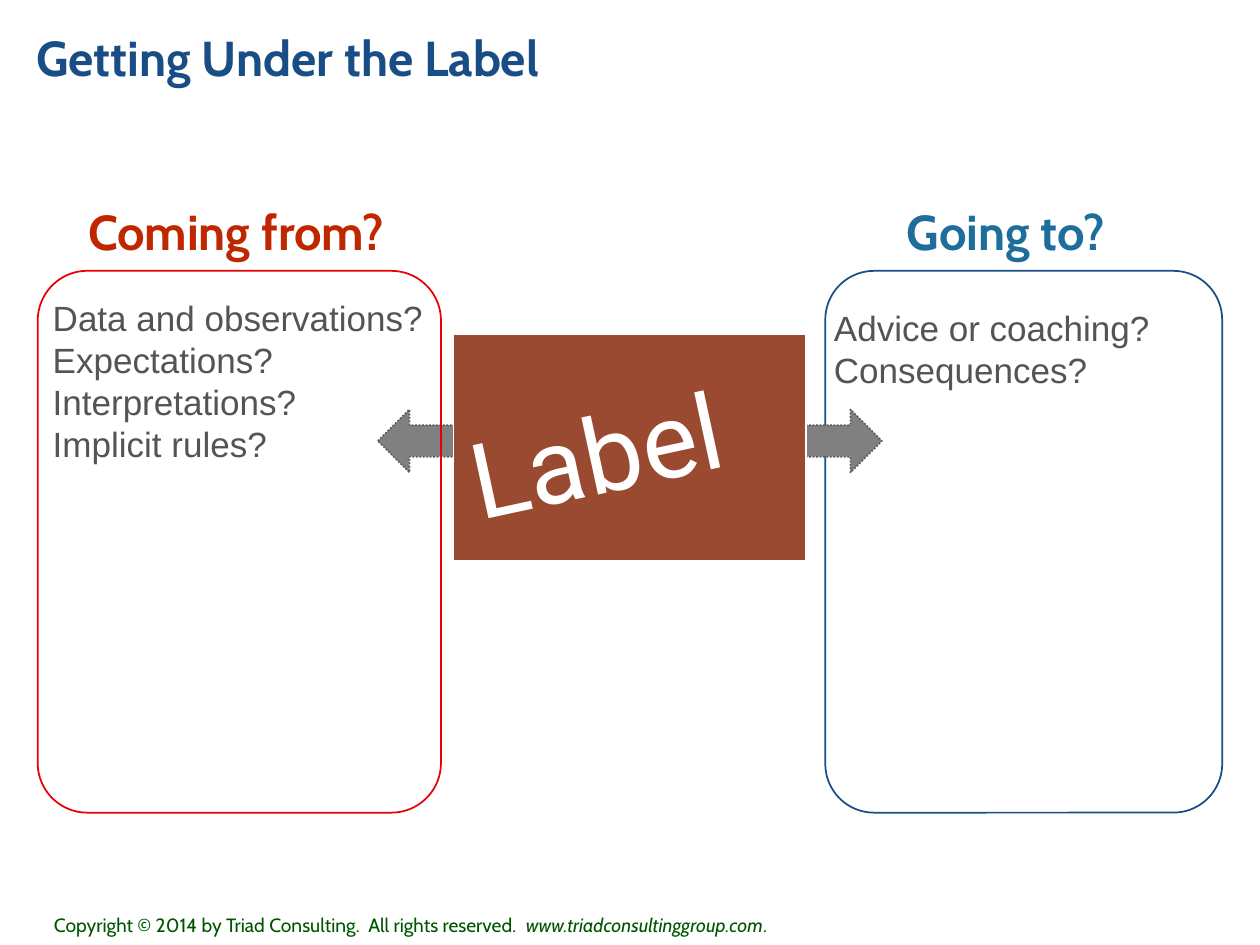
from pptx import Presentation
from pptx import util as u
from pptx.dml.color import RGBColor
from pptx.enum import dml, shapes, text

COLORS = {
    "title": "194D85",
    "from": "BF2700",
    "from_line": "E90000",
    "to": "1E6E9C",
    "to_line": "194D85",
    "body": "545454",
    "arrow": "808080",
    "arrow_line": "595959",
    "label": "994A30",
    "white": "FFFFFF",
    "footer": "005400",
}
PANEL_TOP, PANEL_HEIGHT = 2.15, 4.3
HEADING_TOP, HEADING_HEIGHT = 1.55, 0.57
ARROW_TOP, ARROW_HEIGHT = 3.25, 0.5


def rgb(name):
    return RGBColor.from_string(COLORS[name])


def inches(box):
    return [u.Inches(v) for v in box]


def add_text(s, box, lines, size, font, color, bold=False, rotation=0):
    sp = s.shapes.add_textbox(*inches(box))
    sp.rotation = rotation
    tf = sp.text_frame
    tf.word_wrap = False
    tf.auto_size = text.MSO_AUTO_SIZE.SHAPE_TO_FIT_TEXT
    for i, line in enumerate(lines):
        p = tf.paragraphs[0] if i == 0 else tf.add_paragraph()
        for part, italic in line if isinstance(line, list) else [(line, False)]:
            r = p.add_run()
            r.text = part
            r.font.size = u.Pt(size)
            r.font.name = font
            r.font.bold = bold
            r.font.italic = italic
            r.font.color.rgb = rgb(color)
    return sp


def add_title(s, title):
    sp = add_text(s, (0.25, -0.35, 9.4, 1.6), [title], 28, "Cabin", "title", bold=True)
    tf = sp.text_frame
    tf.auto_size = text.MSO_AUTO_SIZE.NONE
    tf.word_wrap = True
    tf.vertical_anchor = text.MSO_ANCHOR.MIDDLE
    tf.margin_left = u.Inches(0.04)
    tf.margin_right = tf.margin_top = tf.margin_bottom = 0


def add_shape(s, kind, box, line, fill=None):
    sp = s.shapes.add_shape(kind, *inches(box))
    sp.shadow.inherit = False
    if fill:
        sp.fill.solid()
        sp.fill.fore_color.rgb = rgb(fill)
    else:
        sp.fill.background()
    sp.line.color.rgb = rgb(line)
    sp.line.width = u.Pt(1)
    return sp


def add_arrow(s, kind, left, width):
    sp = add_shape(s, kind, (left, ARROW_TOP, width, ARROW_HEIGHT), "arrow_line", "arrow")
    sp.line.dash_style = dml.MSO_LINE.ROUND_DOT


def add_panel(s, left, width, line):
    box = (left, PANEL_TOP, width, PANEL_HEIGHT)
    sp = add_shape(s, shapes.MSO_SHAPE.ROUNDED_RECTANGLE, box, line)
    sp.adjustments[0] = 0.123


def add_heading(s, left, width, heading, color):
    box = (left, HEADING_TOP, width, HEADING_HEIGHT)
    add_text(s, box, [heading], 28, "Cabin", color, bold=True)


def main():
    prs = Presentation()
    prs.slide_width, prs.slide_height = u.Inches(10), u.Inches(7.5)
    s = prs.slides.add_slide(prs.slide_layouts[6])

    footer = [
        ("Copyright © 2014 by Triad Consulting.  All rights reserved", False),
        (".  www.triadconsultinggroup.com", True),
        (".", False),
    ]
    add_text(s, (0.33, 7.2, 6.53, 0.29), [footer], 11, "Cabin", "footer")

    add_arrow(s, shapes.MSO_SHAPE.LEFT_ARROW, 3, 0.8)
    add_panel(s, 0.3, 3.2, "from_line")
    sources = ["Data and observations?", "Expectations?", "Interpretations?", "Implicit rules?"]
    add_text(s, (0.32, 2.3, 3.18, 1.45), sources, 20, "Arial", "body")
    add_heading(s, 0.6, 2.71, "Coming from?", "from")

    add_panel(s, 6.55, 3.15, "to_line")
    outcomes = ["Advice or coaching?", "Consequences?"]
    add_text(s, (6.52, 2.38, 2.78, 0.77), outcomes, 20, "Arial", "body")
    add_heading(s, 7.1, 1.9, "Going to?", "to")
    add_arrow(s, shapes.MSO_SHAPE.RIGHT_ARROW, 6.23, 0.77)

    add_title(s, "Getting Under the Label")
    add_shape(s, shapes.MSO_SHAPE.RECTANGLE, (3.6, 2.65, 2.8, 1.8), "white", "label")
    add_text(s, (3.62, 2.99, 2.68, 1.11), ["Label"], 60, "Roboto", "white", rotation=347.8)

    prs.save("out.pptx")


if __name__ == "__main__":
    main()
